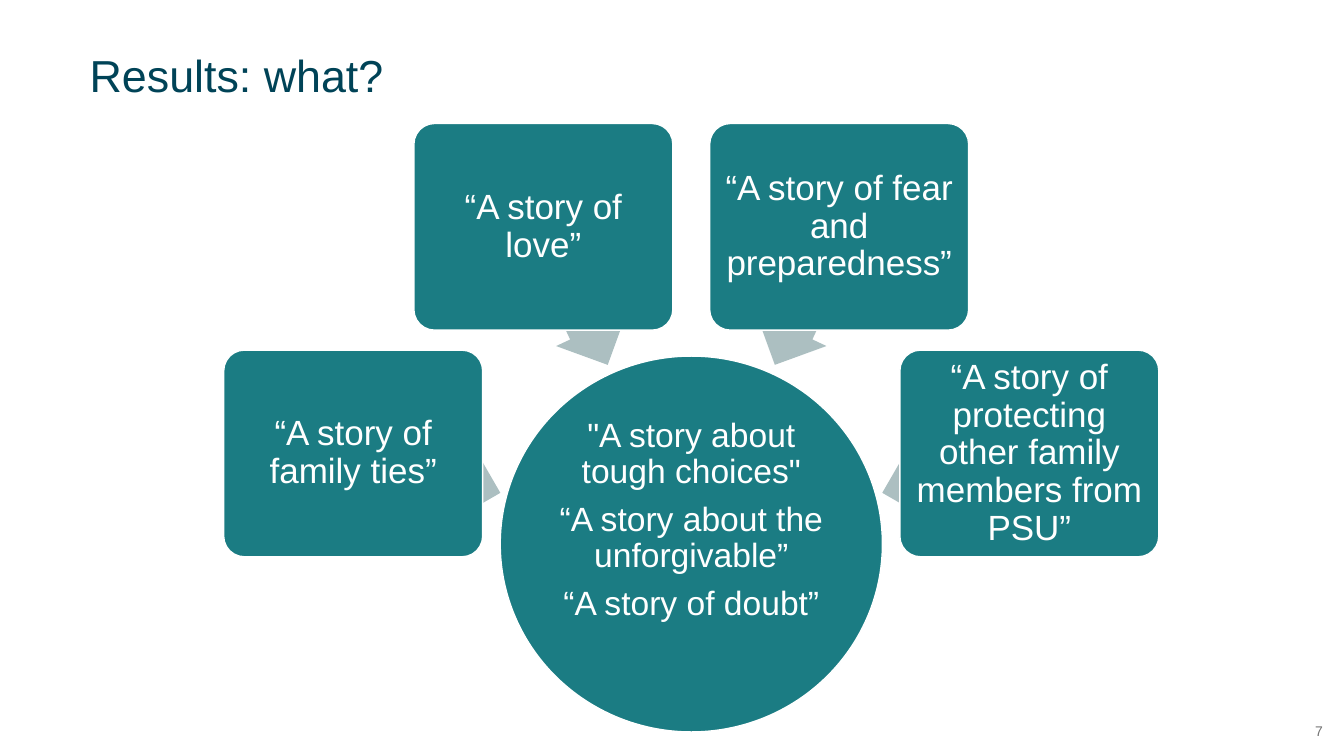
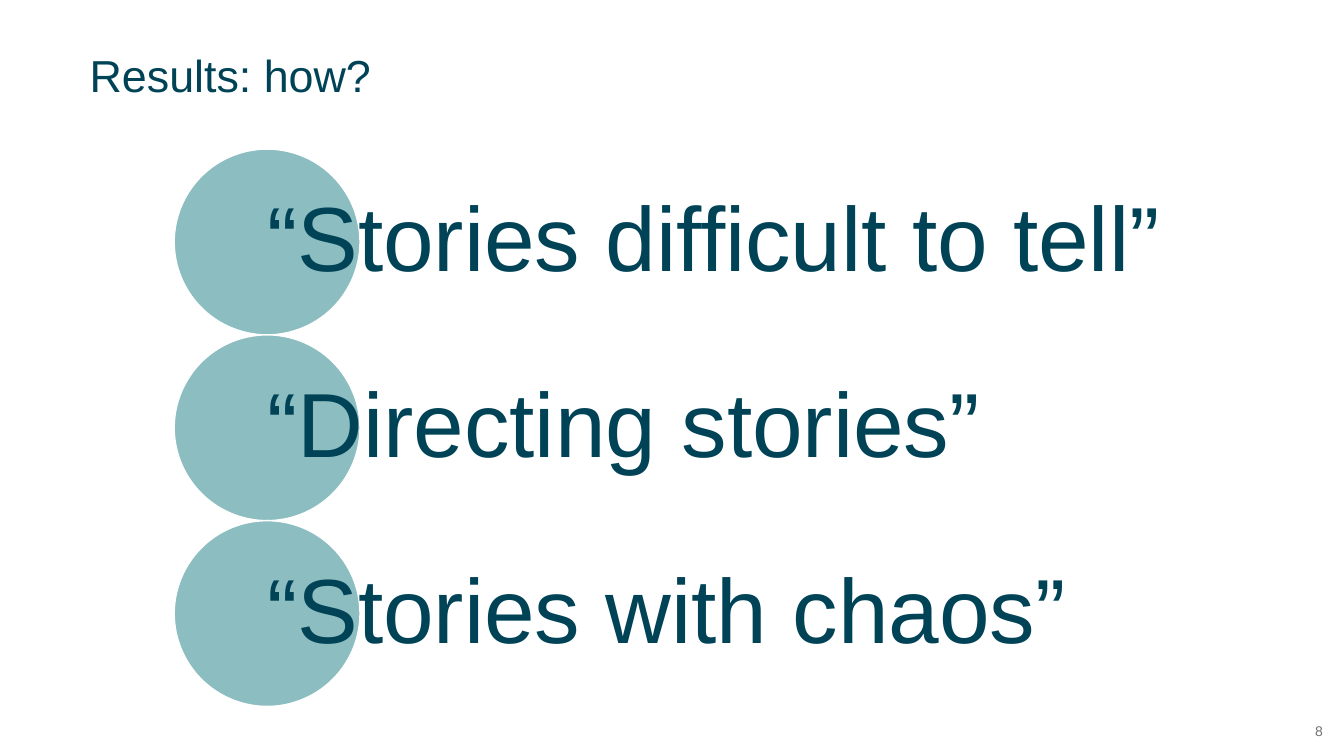
from math import cos, radians, sin

from lxml.etree import SubElement
from pptx import Presentation
from pptx.dml.color import RGBColor
from pptx.enum.shapes import MSO_SHAPE as Kind
from pptx.enum.text import MSO_ANCHOR as Anchor, MSO_AUTO_SIZE as Fit, PP_ALIGN as Align
from pptx.oxml.ns import qn
from pptx.util import Pt

HUES = {
    "teal": "1B7C83",
    "navy": "004357",
    "gray": "ACBFC1",
    "note": "737373",
    "white": "FFFFFF",
}
HUES = {name: RGBColor.from_string(code) for name, code in HUES.items()}


def write(shape, lines, size, hue, align=Align.LEFT, space=None, gap=0, pad=(0, 0, 0, 0)):
    """Fill a shape with paragraphs; pad is left, top, right, bottom."""
    frame = shape.text_frame
    sides = ("margin_left", "margin_top", "margin_right", "margin_bottom")
    look = {"word_wrap": True, "auto_size": Fit.NONE, "vertical_anchor": Anchor.MIDDLE}
    look.update(zip(sides, map(Pt, pad)))
    for key, value in look.items():
        setattr(frame, key, value)
    frame.text = "\n".join(lines)
    for i, para in enumerate(frame.paragraphs):
        style = {"alignment": align, "line_spacing": space,
                 "space_before": Pt(gap if i else 0), "space_after": Pt(0)}
        for key, value in style.items():
            setattr(para, key, value)
        for key, value in {"name": "Arial", "size": Pt(size), "bold": False}.items():
            setattr(para.font, key, value)
        para.font.color.rgb = HUES[hue]


def draw(slide, kind, x, y, wide, high, hue, edge=False):
    """Add a flat shape centred on (x, y)."""
    shape = slide.shapes.add_shape(
        kind, Pt(x - wide / 2), Pt(y - high / 2), Pt(wide), Pt(high))
    shape.shadow.inherit = False
    shape.fill.solid()
    shape.fill.fore_color.rgb = HUES[hue]
    if edge:
        shape.line.color.rgb = HUES["white"]
        shape.line.width = Pt(1)
    else:
        shape.line.fill.background()
    return shape


deck = Presentation()
deck.slide_width, deck.slide_height = Pt(960), Pt(540)
base = deck.slide_layouts[5]

# Shared title and page number
head = base.placeholders[0]
head.left, head.top, head.width, head.height = Pt(64), Pt(0), Pt(860), Pt(106.5)
pages = []
for num, title in enumerate(("Results: what?", "Results: how?"), 7):
    slide = deck.slides.add_slide(base)
    write(slide.shapes.title, [title], 32, "navy")
    foot = slide.shapes.add_textbox(Pt(924.5), Pt(504.5), Pt(35.5), Pt(35.5))
    write(foot, [str(num)], 10, "note", Align.CENTER)
    pages.append(slide)
what, how = pages

# What: stories fanned around a central circle
mid_x, mid_y = 493.8, 388.6
hub = draw(what, Kind.OVAL, mid_x, mid_y, 273, 268.5, "teal", True)
themes = [
    '"A story about tough choices"',
    "“A story about the unforgivable”",
    "“A story of doubt”",
]
write(hub, themes, 24, "white", Align.CENTER, 0.9, 8.4, (1.5, 1.5, 1.5, 35))

stories = [
    "“A story of family ties”",
    "“A story of love”",
    "“A story of fear and preparedness”",
    "“A story of protecting other family members from PSU”",
]
for i, story in enumerate(stories):
    angle = 15 + 50 * i
    dx, dy = cos(radians(angle)), sin(radians(angle))
    arrow = draw(what, Kind.LEFT_ARROW, mid_x - 195.5 * dx, mid_y - 195.5 * dy,
                 108.5, 55.5, "gray")
    arrow.adjustments[0], arrow.adjustments[1] = 0.6, 0.5
    arrow.rotation = 180 + angle
    card = draw(what, Kind.ROUNDED_RECTANGLE, mid_x - 250 * dx, mid_y - 250 * dy,
                185, 147.6, "teal", True)
    card.adjustments[0] = 0.1
    write(card, [story], 25, "white", Align.CENTER, 0.9, pad=(3.5,) * 4)

# How: three stacked circles with large statements
size, top, left = 132.7, 106.5, 190.8
for i, story in enumerate(
        ("“Stories difficult to tell”", "“Directing stories”", "“Stories with chaos”")):
    y = top + i * size
    disc = draw(how, Kind.OVAL, left, y + size / 2, size, size, "teal", True)
    tint = disc.fill._xPr.find(qn("a:solidFill"))[0]
    SubElement(tint, qn("a:alpha"), val="50000")
    label = how.shapes.add_textbox(Pt(left), Pt(y), Pt(708), Pt(size))
    write(label, [story], 65, "navy", space=0.9, pad=(0, 6.5, 0, 6.5))

deck.save("out.pptx")
